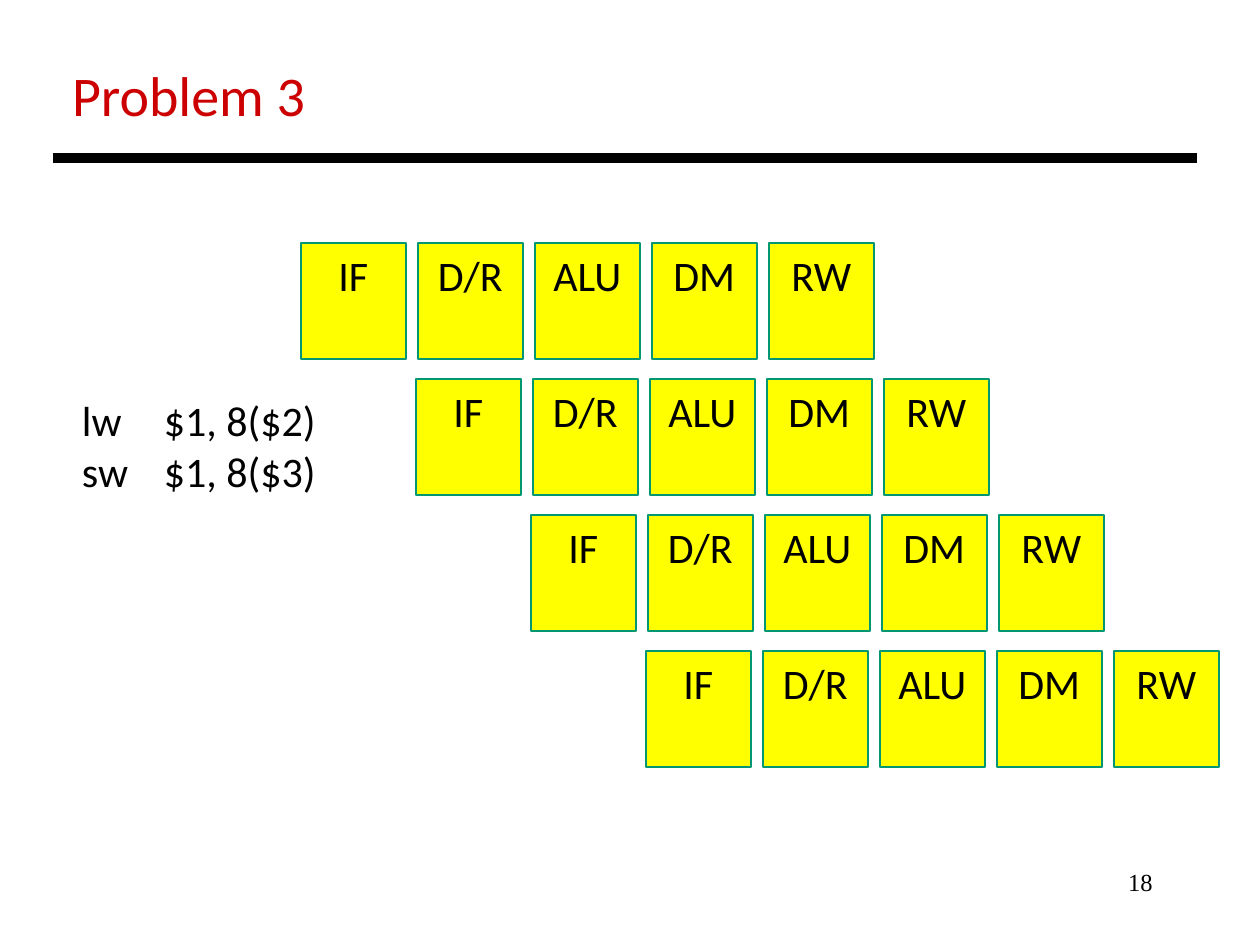
import pptx
import pptx.util
import pptx.dml.color
import pptx.enum.shapes
import pptx.enum.text
import lxml.etree
from pptx.oxml.ns import qn

EMU_PER_PX = 914400 / 126
STAGES = ["IF", "D/R", "ALU", "DM", "RW"]
INSTRUCTION_COUNT = 4
ALIGN = pptx.enum.text.PP_ALIGN


def px(length):
    return pptx.util.Emu(round(length * EMU_PER_PX))


def color(hex_string):
    return pptx.dml.color.RGBColor.from_string(hex_string)


def write_text(frame, text, size=24, font="Calibri", ink="000000",
               align=ALIGN.LEFT, wrap=True, left=12, top=6, tab=None):
    """Fill a text frame, one paragraph a line; tab is a tab stop in px."""
    frame.word_wrap = wrap
    frame.vertical_anchor = pptx.enum.text.MSO_ANCHOR.TOP
    frame.margin_left, frame.margin_top = px(left), px(top)
    for number, line in enumerate(text.split("\n")):
        paragraph = frame.add_paragraph() if number else frame.paragraphs[0]
        paragraph.alignment = align
        run = paragraph.add_run()
        run.text = line
        run.font.size = pptx.util.Pt(size)
        run.font.name = font
        run.font.color.rgb = color(ink)
        if tab:
            properties = paragraph._p.get_or_add_pPr()
            stops = lxml.etree.SubElement(properties, qn("a:tabLst"))
            lxml.etree.SubElement(stops, qn("a:tab"), pos=str(px(tab)), algn="l")


class SlideBuilder:
    title_ink = "CC0000"
    rule_ink = "000000"
    stage_fill = "FFFF00"
    stage_line = "009771"

    def __init__(self, presentation):
        self.slide = presentation.slides.add_slide(presentation.slide_layouts[6])

    def text(self, x, y, width, height, text, **text_format):
        box = self.slide.shapes.add_textbox(px(x), px(y), px(width), px(height))
        write_text(box.text_frame, text, **text_format)

    def rule(self, x1, x2, y, weight):
        """Draw a horizontal line."""
        line = self.slide.shapes.add_connector(
            pptx.enum.shapes.MSO_CONNECTOR.STRAIGHT, px(x1), px(y), px(x2), px(y))
        line.line.color.rgb = color(self.rule_ink)
        line.line.width = pptx.util.Pt(weight)
        lxml.etree.SubElement(line._element.spPr, qn("a:effectLst"))

    def stage(self, x, y, label):
        box = self.slide.shapes.add_shape(
            pptx.enum.shapes.MSO_SHAPE.RECTANGLE, px(x), px(y), px(105), px(116))
        box.shadow.inherit = False
        box.fill.solid()
        box.fill.fore_color.rgb = color(self.stage_fill)
        box.line.color.rgb = color(self.stage_line)
        box.line.width = pptx.util.Pt(1)
        write_text(box.text_frame, label, align=ALIGN.CENTER, top=7)


def main():
    presentation = pptx.Presentation()
    presentation.slide_width, presentation.slide_height = px(1260), px(945)
    builder = SlideBuilder(presentation)

    builder.text(903, 861, 262, 63, "18", size=14, font="Times New Roman",
                 align=ALIGN.RIGHT)
    builder.text(60, 54, 261, 81, "Problem 3", size=32,
                 ink=builder.title_ink, wrap=False)
    builder.rule(53, 1197, 158, weight=6)

    for cycle in range(INSTRUCTION_COUNT):
        for step, label in enumerate(STAGES):
            builder.stage(301 + 115 * cycle + 117 * step, 243 + 136 * cycle, label)

    builder.text(60, 389, 275, 115, "lw\t$1, 8($2)\nsw\t$1, 8($3)",
                 wrap=False, left=22, tab=82)
    presentation.save("out.pptx")


if __name__ == "__main__":
    main()
